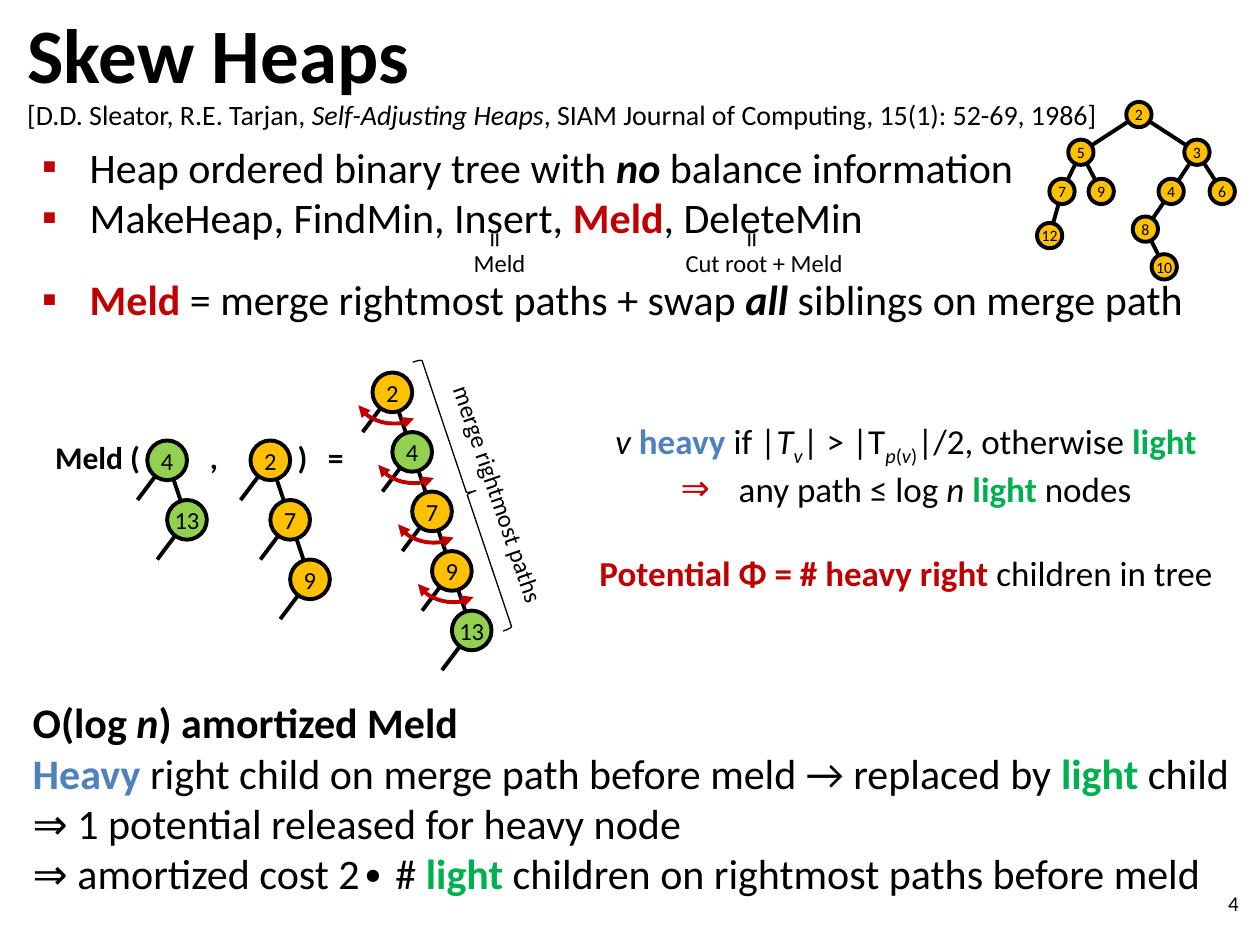
from dataclasses import dataclass

from lxml import etree
from pptx import Presentation
from pptx import util as u
from pptx.dml.color import RGBColor
from pptx.enum import shapes, text
from pptx.oxml import ns

Cm, Pt = u.Cm, u.Pt


@dataclass(frozen=True)
class Theme:
    font: str = "Calibri"
    black: str = "000000"
    red: str = "C00000"
    blue: str = "4F81BD"
    green: str = "00B050"
    node_gold: str = "FFC000"
    node_green: str = "92D050"
    title: int = 44
    body: int = 24
    note: int = 20
    label: int = 18
    citation: int = 16
    small: int = 14
    number: int = 12
    tiny: int = 9
    line: float = 2.25


THEME = Theme()
BOLD = {"bold": True}
ITALIC = {"italic": True}
STRONG = {"bold": True, "italic": True}
RED, BLUE, GREEN = ({"bold": True, "color": c} for c in (THEME.red, THEME.blue, THEME.green))
SUB = {"baseline": -25000}
ALIGN = text.PP_ALIGN


# Text
def add_run(paragraph, words, size, color=THEME.black, bold=False, italic=False, baseline=0):
    run = paragraph.add_run()
    run.text = words
    font = run.font
    font.name, font.size, font.bold, font.italic = THEME.font, Pt(size), bold, italic
    font.color.rgb = RGBColor.from_string(color)
    if baseline:
        run._r.get_or_add_rPr().set("baseline", str(baseline))


def fill_text(frame, paragraphs, size, align=ALIGN.LEFT):
    """Each paragraph is a list of plain strings and (string, style) pairs."""
    for index, runs in enumerate(paragraphs):
        paragraph = frame.add_paragraph() if index else frame.paragraphs[0]
        paragraph.alignment = align
        for item in runs:
            words, style = (item, {}) if isinstance(item, str) else item
            add_run(paragraph, words, size, **style)
    return frame.paragraphs


def add_text(slide, box, paragraphs, size, align=ALIGN.LEFT, rotation=0):
    shape = slide.shapes.add_textbox(*map(Cm, box))
    shape.rotation = rotation
    shape.text_frame.word_wrap = True
    return fill_text(shape.text_frame, paragraphs, size, align)


def add_bullet(paragraph, symbol, indent):
    properties = paragraph._p.get_or_add_pPr()
    properties.set("marL", str(Cm(indent)))
    properties.set("indent", str(-Cm(indent)))
    color = etree.SubElement(properties, ns.qn("a:buClr"))
    etree.SubElement(color, ns.qn("a:srgbClr"), val=THEME.red)
    etree.SubElement(properties, ns.qn("a:buFont"), typeface=THEME.font)
    etree.SubElement(properties, ns.qn("a:buChar"), char=symbol)


# Tree parts
def add_edge(group, start, end):
    edge = group.shapes.add_connector(shapes.MSO_CONNECTOR.STRAIGHT, *map(Cm, (*start, *end)))
    edge.line.width = Pt(THEME.line)
    edge.line.color.rgb = RGBColor.from_string(THEME.black)
    etree.SubElement(edge._element.spPr, ns.qn("a:effectLst"))


def add_node(group, label, center, diameter, size, fill):
    left, top = (value - diameter / 2 for value in center)
    node = group.shapes.add_shape(
        shapes.MSO_SHAPE.OVAL, Cm(left), Cm(top), Cm(diameter), Cm(diameter))
    node.shadow.inherit = False
    node.fill.solid()
    node.fill.fore_color.rgb = RGBColor.from_string(fill)
    node.line.width = Pt(THEME.line)
    node.line.color.rgb = RGBColor.from_string(THEME.black)
    frame = node.text_frame
    frame.margin_left = frame.margin_right = 0
    frame.word_wrap = False
    frame.vertical_anchor = text.MSO_ANCHOR.MIDDLE
    fill_text(frame, [[str(label)]], size, ALIGN.CENTER)


def add_outline(parent, kind, box, color, width):
    shape = parent.shapes.add_shape(kind, *map(Cm, box))
    shape.shadow.inherit = False
    shape.fill.background()
    shape.line.width = Pt(width)
    shape.line.color.rgb = RGBColor.from_string(color)
    return shape


def add_swap_arrow(group, center):
    x, y = center
    arc = add_outline(group, shapes.MSO_SHAPE.ARC, (x - 0.78, y - 0.77, 1.6, 1.4),
                      THEME.red, THEME.line)
    for index, degrees in enumerate((55, 154.7)):
        arc.adjustments[index] = degrees * 0.6  # 60000ths of a degree / 100000
    line = arc.line._get_or_add_ln()
    for end in ("a:headEnd", "a:tailEnd"):
        etree.SubElement(line, ns.qn(end), type="triangle")


def add_right_path(slide, root, labels, green, swaps=False):
    """A rightmost path, with a stub for the left subtree of each node."""
    group = slide.shapes.add_group_shape()
    centers = [(root[0] + 0.4 * i, root[1] + 1.2 * i) for i in range(len(labels))]
    for x, y in centers:
        add_edge(group, (x, y), (x - 0.6, y + 0.8))
    add_edge(group, centers[0], centers[-1])
    for label, center in zip(labels, centers):
        fill = THEME.node_green if label in green else THEME.node_gold
        add_node(group, label, center, 0.8, THEME.small, fill)
    if swaps:
        for center in centers[:-1]:
            add_swap_arrow(group, center)


def add_heap(slide):
    # label: (x, y, parent)
    nodes = {2: (22.96, 2.31, None), 5: (21.79, 3.07, 2), 3: (24.13, 3.07, 2),
             7: (21.41, 3.86, 5), 9: (22.2, 3.86, 5), 4: (23.61, 3.86, 3),
             6: (24.64, 3.86, 3), 12: (21.16, 4.75, 7), 8: (23.09, 4.62, 4),
             10: (23.47, 5.38, 8)}
    group = slide.shapes.add_group_shape()
    for x, y, parent in nodes.values():
        if parent:
            add_edge(group, nodes[parent][:2], (x, y))
    for label, (x, y, _) in nodes.items():
        add_node(group, label, (x, y), 0.51, THEME.tiny, THEME.node_gold)


# Slide parts
def add_heading(slide):
    title = slide.shapes.title
    title.left, title.top, title.width, title.height = map(Cm, (0.3, -0.23, 8.41, 2.59))
    title.text_frame.vertical_anchor = text.MSO_ANCHOR.MIDDLE
    title.text_frame.word_wrap = False
    fill_text(title.text_frame, [[("Skew Heaps", BOLD)]], THEME.title)
    add_text(slide, (0.3, 1.84, 22.2, 1.09), [[
        "[D.D. Sleator, R.E. Tarjan, ", ("Self-Adjusting Heaps", ITALIC),
        ", SIAM Journal of Computing, 15(1): 52-69, 1986]"]], THEME.citation)


def add_operations(slide):
    bullets = add_text(slide, (0.6, 2.72, 23.7, 4.19), [
        ["Heap ordered binary tree with ", ("no ", STRONG), "balance information"],
        ["MakeHeap, FindMin, Insert, ", ("Meld", RED), ", DeleteMin"],
        [("Meld", RED), " = merge rightmost paths + swap ", ("all ", STRONG),
         "siblings on merge path"]], THEME.body)
    bullets[2].line_spacing = Pt(18)
    bullets[2].space_before = Pt(29)
    for paragraph in bullets:
        add_bullet(paragraph, "▪", 0.96)
    for left in (9.53, 14.71):
        add_text(slide, (left, 4.42, 0.99, 1.02), [["="]], THEME.label, rotation=90)
    for left, words in ((9.3, "Meld"), (13.57, "Cut root + Meld")):
        add_text(slide, (left, 4.88, 4, 0.86), [[words]], THEME.small)


def add_meld_example(slide):
    for left, words in ((0.86, "Meld ("), (3.98, ","), (5.75, ")"), (6.36, "=")):
        add_text(slide, (left, 8.71, 3, 1.02), [[(words, BOLD)]], THEME.label)
    add_right_path(slide, (3.37, 9.28), (4, 13), {4, 13})
    add_right_path(slide, (5.45, 9.28), (2, 7, 9), {})
    add_right_path(slide, (7.91, 7.91), (2, 4, 7, 9, 13), {4, 13}, swaps=True)
    brace = add_outline(slide, shapes.MSO_SHAPE.LEFT_BRACE, (9.22, 7.09, 0.38, 5.72),
                        THEME.black, 0.75)
    brace.rotation = 161.4
    add_text(slide, (7.34, 9.53, 5.41, 0.86), [["merge rightmost paths"]],
             THEME.small, ALIGN.CENTER, rotation=71)


def add_analysis(slide):
    notes = add_text(slide, (11.71, 8.33, 13.11, 3.68), [
        [("v ", ITALIC), ("heavy ", BLUE), "if |", ("T", ITALIC), ("v", ITALIC | SUB),
         "| > |T", ("p", ITALIC | SUB), ("(", SUB), ("v", ITALIC | SUB), (")", SUB),
         "|/2, otherwise ", ("light", GREEN)],
        ["any path ≤ log ", ("n ", ITALIC), ("light ", GREEN), "nodes"],
        [("Potential Φ = # heavy right", RED), " children in tree"]],
        THEME.note, ALIGN.CENTER)
    add_bullet(notes[1], "⇒", 1.17)
    notes[2].space_before = Pt(24)
    add_text(slide, (0.41, 13.92, 24.69, 4.37), [
        [("O(log ", BOLD), ("n", STRONG), (") amortized Meld", BOLD)],
        [("Heavy", BLUE), " right child on merge path before meld → replaced by ",
         ("light ", GREEN), "child"],
        ["⇒ 1 potential released for heavy node"],
        ["⇒ amortized cost 2∙ # ", ("light ", GREEN),
         "children on rightmost paths before meld"]], THEME.body)


def main():
    presentation = Presentation()
    presentation.slide_width, presentation.slide_height = Cm(25.4), Cm(19.05)
    slide = presentation.slides.add_slide(presentation.slide_layouts[5])
    add_heading(slide)
    add_operations(slide)
    add_meld_example(slide)
    add_analysis(slide)
    add_heap(slide)
    add_text(slide, (19.3, 17.83, 5.92, 1.02), [["4"]], THEME.number, ALIGN.RIGHT)
    presentation.save("out.pptx")


if __name__ == "__main__":
    main()
